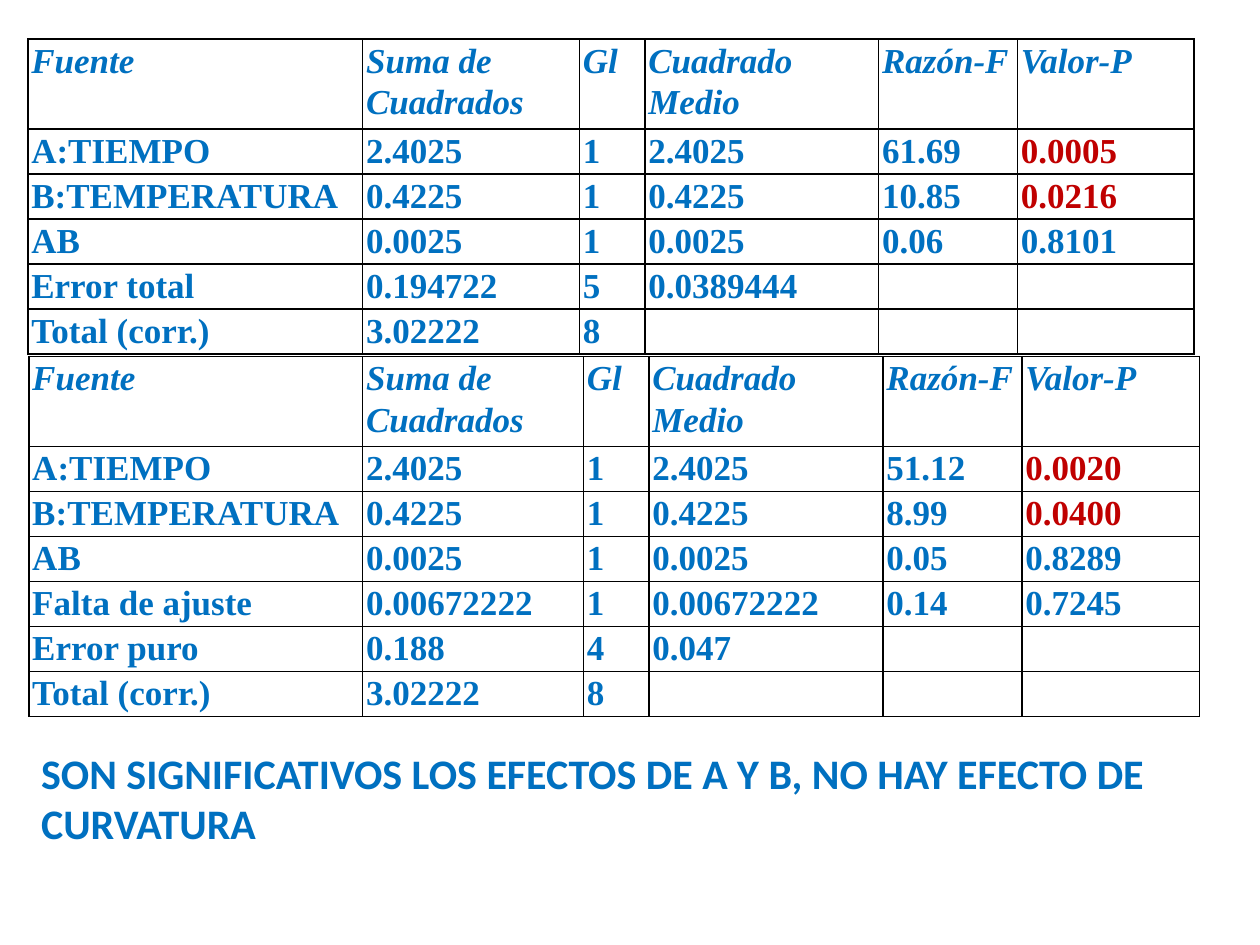
from dataclasses import dataclass

import pptx
import pptx.dml.color
import pptx.oxml
import pptx.oxml.ns
import pptx.util
from lxml import etree
from pptx.util import Cm, Pt

BLUE = pptx.dml.color.RGBColor(0x00, 0x70, 0xC0)
RED = pptx.dml.color.RGBColor(0xC0, 0x00, 0x00)
BLACK = pptx.dml.color.RGBColor(0x00, 0x00, 0x00)

HEADINGS = ("Fuente", "Suma de Cuadrados", "Gl", "Cuadrado Medio", "Razón-F", "Valor-P")
SIGNIFICANCE = 0.05
HEADING_HEIGHT = Cm(1.81)
ROW_HEIGHT = Cm(0.907)


@dataclass(frozen=True)
class Anova:
    left: float
    top: float
    widths: tuple[float, ...]
    sources: tuple[tuple[str, ...], ...]


EFFECTS = (
    ("A:TIEMPO", "2.4025", "1", "2.4025"),
    ("B:TEMPERATURA", "0.4225", "1", "0.4225"),
    ("AB", "0.0025", "1", "0.0025"),
)
TOTAL = ("Total (corr.)", "3.02222", "8", "", "", "")


def with_tests(*tests: tuple[str, str]) -> tuple[tuple[str, ...], ...]:
    return tuple(effect + test for effect, test in zip(EFFECTS, tests))


TOTAL_ERROR_ANOVA = Anova(
    0.56, 0.79, (6.75, 4.37, 1.32, 4.71, 2.8, 3.56),
    with_tests(("61.69", "0.0005"), ("10.85", "0.0216"), ("0.06", "0.8101"))
    + (("Error total", "0.194722", "5", "0.0389444", "", ""), TOTAL),
)
CURVATURE_ANOVA = Anova(
    0.58, 7.19, (6.73, 4.45, 1.32, 4.72, 2.8, 3.58),
    with_tests(("51.12", "0.0020"), ("8.99", "0.0400"), ("0.05", "0.8289"))
    + (
        ("Falta de ajuste", "0.00672222", "1", "0.00672222", "0.14", "0.7245"),
        ("Error puro", "0.188", "4", "0.047", "", ""),
        TOTAL,
    ),
)


def add_run(paragraph, text: str, face: str, size: int, color, italic: bool = False) -> None:
    run = paragraph.add_run()
    run.text = text
    run.font.name = face
    run.font.size = Pt(size)
    run.font.bold = True
    run.font.italic = italic
    run.font.color.rgb = color


def add_borders(cell) -> None:
    properties = cell._tc.get_or_add_tcPr()
    for position, side in enumerate(("lnL", "lnR", "lnT", "lnB")):
        border = pptx.oxml.parse_xml(
            f'<a:{side} {pptx.oxml.ns.nsdecls("a")} w="{Pt(1)}"><a:solidFill/></a:{side}>'
        )
        etree.SubElement(border[0], pptx.oxml.ns.qn("a:srgbClr"), val=str(BLACK))
        properties.insert(position, border)


def fill_cell(cell, text: str, color, italic: bool) -> None:
    cell.margin_left = cell.margin_right = Cm(0.07)
    cell.margin_top = cell.margin_bottom = 0
    cell.fill.background()
    add_borders(cell)
    if text:
        paragraph = cell.text_frame.paragraphs[0]
        paragraph.line_spacing = 1.07
        add_run(paragraph, text, "Times New Roman", 20, color, italic)


def add_anova(slide, anova: Anova) -> None:
    lines = (HEADINGS,) + anova.sources
    height = HEADING_HEIGHT + ROW_HEIGHT * len(anova.sources)
    table = slide.shapes.add_table(
        len(lines), len(HEADINGS),
        Cm(anova.left), Cm(anova.top), Cm(sum(anova.widths)), height,
    ).table
    table.first_row = False
    table.horz_banding = False
    for column, width in zip(table.columns, anova.widths):
        column.width = Cm(width)
    for row_index, line in enumerate(lines):
        is_heading = row_index == 0
        table.rows[row_index].height = HEADING_HEIGHT if is_heading else ROW_HEIGHT
        p_value = "" if is_heading else line[-1]
        significant = bool(p_value) and float(p_value) < SIGNIFICANCE
        for column_index, text in enumerate(line):
            is_p_value = column_index == len(line) - 1
            color = RED if significant and is_p_value else BLUE
            fill_cell(table.cell(row_index, column_index), text, color, is_heading)


def add_conclusion(slide, text: str) -> None:
    conclusion = slide.shapes.add_textbox(Cm(0.58), Cm(14.94), Cm(24.51), Cm(2.31))
    conclusion.text_frame.word_wrap = True
    add_run(conclusion.text_frame.paragraphs[0], text, "Calibri", 24, BLUE)


def main() -> None:
    presentation = pptx.Presentation()
    presentation.slide_width = Cm(25.4)
    presentation.slide_height = Cm(19.05)
    slide = presentation.slides.add_slide(presentation.slide_layouts.get_by_name("Blank"))
    add_conclusion(slide, "SON SIGNIFICATIVOS LOS EFECTOS DE A Y B, NO HAY EFECTO DE CURVATURA")
    for anova in (TOTAL_ERROR_ANOVA, CURVATURE_ANOVA):
        add_anova(slide, anova)
    presentation.save("out.pptx")


if __name__ == "__main__":
    main()
